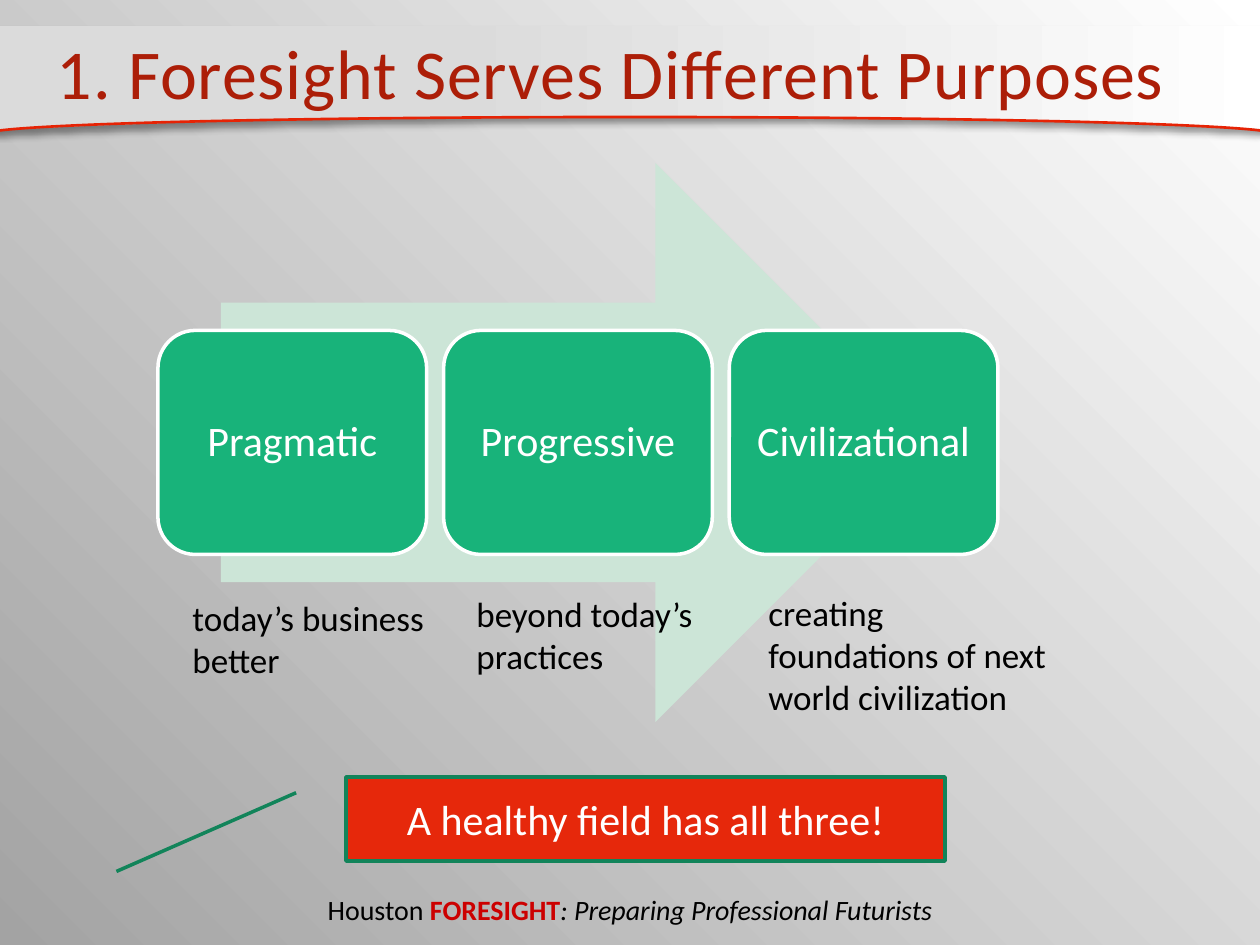
from lxml.etree import SubElement
from pptx import Presentation
from pptx.dml.color import RGBColor
from pptx.enum.shapes import MSO_SHAPE
from pptx.enum.text import MSO_ANCHOR, PP_ALIGN
from pptx.oxml.ns import qn
from pptx.util import Pt

PX = 914400 / 126
FONT = "Calibri"
COLORS = {
    "white": "FFFFFF", "black": "000000", "grey": "A3A3A3", "band": "DBDBDB",
    "rule": "E62305", "title": "AC1E08", "brand": "CC0000", "arrow": "CCE5D7",
    "card": "18B37A", "callout": "E6280B", "callout_line": "12845A",
}
PURPOSES = ["Pragmatic", "Progressive", "Civilizational"]
# Left, top, width, height of each explanation, with its text
EXPLANATIONS = [
    ((180, 590, 282, 97), "today’s business better"),
    ((464, 586, 315, 97), "beyond today’s practices"),
    ((756, 585, 315, 140), "creating foundations of next world civilization"),
]


def emu(*lengths):
    return [round(length * PX) for length in lengths]


def color(name):
    return RGBColor.from_string(COLORS[name])


def set_gradient(fill, angle, *stops):
    fill.gradient()
    fill.gradient_angle = angle
    for stop, (position, name) in zip(fill.gradient_stops, stops):
        stop.position = position
        stop.color.rgb = color(name)


def add_shadow(shape):
    effects = SubElement(shape._element.spPr, qn("a:effectLst"))
    shadow = SubElement(effects, qn("a:outerShdw"), blurRad=str(Pt(4)),
                        dist=str(Pt(3)), dir="5400000", rotWithShape="0")
    shade = SubElement(shadow, qn("a:srgbClr"), val=COLORS["black"])
    SubElement(shade, qn("a:alpha"), val="40000")


def add_preset(slide, preset, box, fill=None, line=None, width=2):
    shape = slide.shapes.add_shape(preset, *emu(*box))
    shape.shadow.inherit = False
    if fill:
        shape.fill.solid()
        shape.fill.fore_color.rgb = color(fill)
    else:
        shape.fill.background()
    if line:
        shape.line.color.rgb = color(line)
        shape.line.width = Pt(width)
    else:
        shape.line.fill.background()
    return shape


def write(shape, text, size, name, align=PP_ALIGN.LEFT, anchor=MSO_ANCHOR.TOP):
    frame = shape.text_frame
    frame.word_wrap = True
    frame.vertical_anchor = anchor
    paragraph = frame.paragraphs[0]
    paragraph.text = text
    paragraph.alignment = align
    paragraph.font.name = FONT
    paragraph.font.size = Pt(size)
    paragraph.font.color.rgb = color(name)
    return paragraph


def add_text(slide, box, text, size):
    return write(slide.shapes.add_textbox(*emu(*box)), text, size, "black")


def curve(start, control_1, control_2, end, steps=24):
    """Points along a cubic Bezier curve, without its start."""
    for step in range(1, steps + 1):
        t = step / steps
        weights = ((1 - t) ** 3, 3 * t * (1 - t) ** 2, 3 * t * t * (1 - t), t ** 3)
        corners = (start, control_1, control_2, end)
        yield tuple(sum(w * c[axis] for w, c in zip(weights, corners))
                    for axis in (0, 1))


def draw_header(slide, box):
    left, top, width, height = box
    right, bottom = left + width, top + height
    crest = (left + 670, bottom - 14)
    right_end = (right, bottom - 1)

    # Light band with a curved lower edge
    outline = [
        (right, top), right_end,
        *curve(right_end, (right - 160, bottom - 9), (right - 375, bottom - 14), crest),
        *curve(crest, (left + 409, bottom - 14), (left + 175, bottom - 9),
               (left + 11, bottom)),
        (left, bottom),
    ]
    builder = slide.shapes.build_freeform(*emu(left, top))
    builder.add_line_segments([emu(*point) for point in outline], close=True)
    band = builder.convert_to_shape()
    set_gradient(band.fill, 0, (0.36, "band"), (1, "white"))
    band.line.fill.background()
    add_shadow(band)

    # Red rule along the curve
    rule = add_preset(slide, MSO_SHAPE.ARC, (left - 3, bottom - 13, width + 7, 34),
                      line="rule", width=1.5)
    rule.adjustments[0], rule.adjustments[1] = 108.018, 215.853


def draw_title(slide, box):
    title = slide.shapes.title
    title.left, title.top, title.width, title.height = emu(*box)
    paragraph = write(title, "1. Foresight Serves Different Purposes ", 40, "title",
                      PP_ALIGN.CENTER, MSO_ANCHOR.MIDDLE)
    paragraph.runs[0]._r.get_or_add_rPr().set("spc", "50")
    # Bring the title in front of the band
    title._element.getparent().append(title._element)


def draw_purposes(slide, box):
    left, top, width, height = box
    add_preset(slide, MSO_SHAPE.RIGHT_ARROW, (left + 63, top, 714, height), "arrow")

    # Three equal cards, centred on the arrow
    gap, card_height = 17, 224
    card_width = (width - gap * (len(PURPOSES) - 1)) / len(PURPOSES)
    card_top = top + (height - card_height) / 2
    for index, purpose in enumerate(PURPOSES):
        card_left = left + index * (card_width + gap)
        card = add_preset(slide, MSO_SHAPE.ROUNDED_RECTANGLE,
                          (card_left, card_top, card_width, card_height),
                          "card", "white")
        paragraph = write(card, purpose, 24, "white",
                          PP_ALIGN.CENTER, MSO_ANCHOR.MIDDLE)
        paragraph.line_spacing = 0.9


def draw_callout(slide, box):
    callout = add_preset(slide, MSO_SHAPE.LINE_CALLOUT_1, box, "callout", "callout_line")
    write(callout, "A healthy field has all three!", 24, "white",
          PP_ALIGN.CENTER, MSO_ANCHOR.MIDDLE)


def draw_footer(slide, box):
    paragraph = add_text(slide, box, "Houston ", 16)
    paragraph.alignment = PP_ALIGN.CENTER
    program = paragraph.add_run()
    program.text = "FORESIGHT"
    program.font.bold = True
    program.font.color.rgb = color("brand")
    motto = paragraph.add_run()
    motto.text = ": Preparing Professional Futurists"
    motto.font.italic = True


def main():
    presentation = Presentation()
    presentation.slide_width, presentation.slide_height = emu(1260, 945)
    slide = presentation.slides.add_slide(presentation.slide_layouts[5])
    set_gradient(slide.background.fill, 225, (0, "white"), (1, "grey"))

    draw_header(slide, (-11, 26, 1281, 104))
    draw_footer(slide, (210, 886, 840, 47))
    draw_title(slide, (42, -8, 1155, 158))
    draw_purposes(slide, (158, 163, 840, 559))
    for box, text in EXPLANATIONS:
        add_text(slide, box, text, 20)
    draw_callout(slide, (346, 777, 599, 84))
    presentation.save("out.pptx")


if __name__ == "__main__":
    main()
